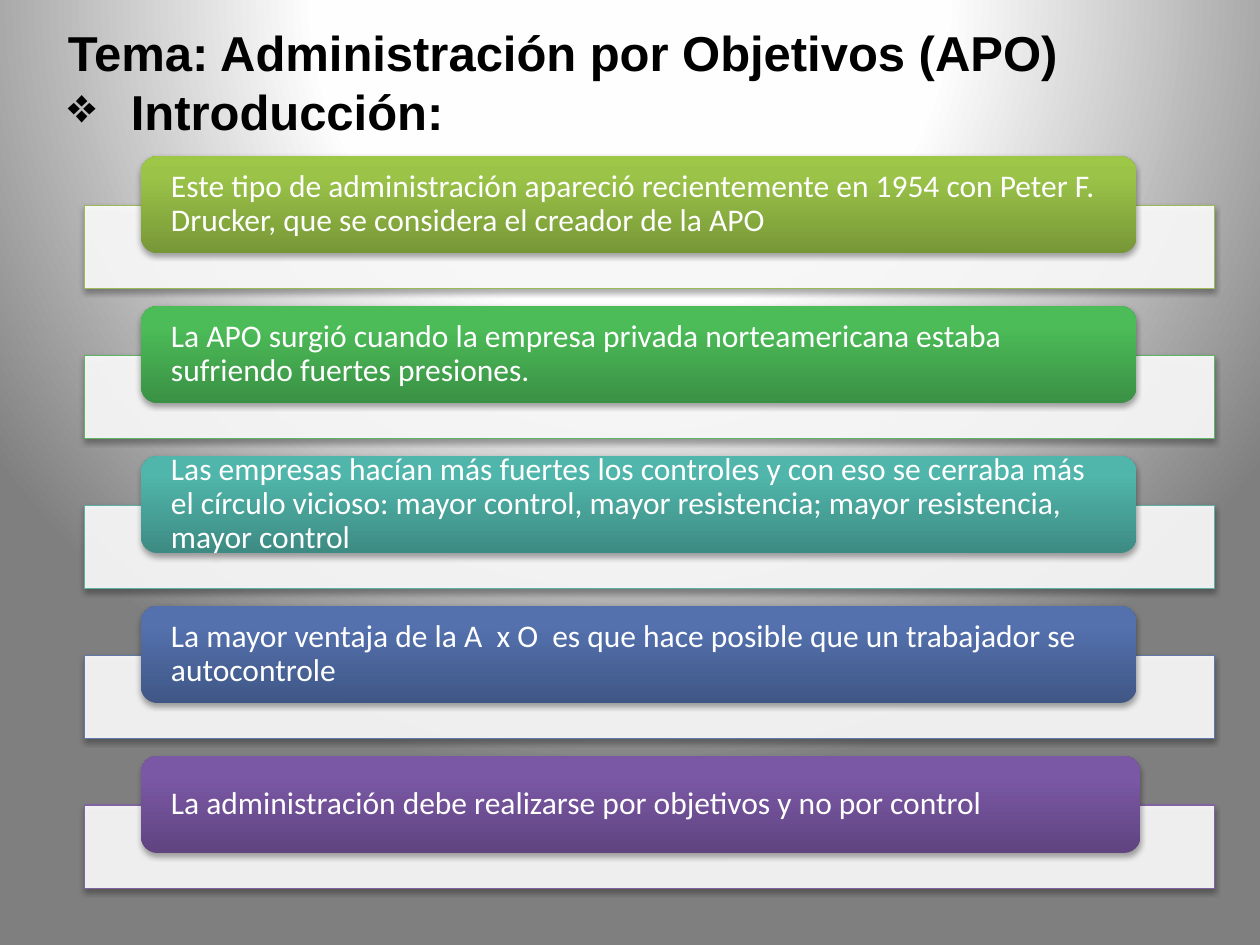
from lxml.etree import SubElement
from pptx import Presentation
from pptx.dml.color import RGBColor
from pptx.enum.shapes import MSO_SHAPE as Shape
from pptx.enum.text import MSO_ANCHOR as Anchor, PP_ALIGN as Align
from pptx.oxml.ns import qn
from pptx.util import Inches, Pt

TITLE = "Tema: Administración por Objetivos (APO)"
SUBTITLE = "Introducción:"
BACKDROP = [(0, "FFFFFF"), (40, "FEFEFE"), (100, "7F7F7F")]
IDEAS = [
    ("Este tipo de administración apareció recientemente en 1954 con Peter F. Drucker, "
     "que se considera el creador de la APO", "9BBB59", ("779737", "9BC348", "9DC746")),
    ("La APO surgió cuando la empresa privada norteamericana estaba sufriendo fuertes "
     "presiones.", "5CB565", ("3A9144", "4CBC58", "4ABF57")),
    ("Las empresas hacían más fuertes los controles y con eso se cerraba más el círculo "
     "vicioso: mayor control, mayor resistencia; mayor resistencia, mayor control",
     "5EAFA6", ("3D8B83", "50B5AA", "4EB8AC")),
    ("La mayor ventaja de la A  x O  es que hace posible que un trabajador se autocontrole",
     "6179A8", ("405786", "5471AE", "5271B0")),
    ("La administración debe realizarse por objetivos y no por control",
     "8064A2", ("5F4480", "7B58A6", "7C57A8")),
]
LABEL_STOPS = (0, 80, 100)
TOP, PITCH = 1.24, 1.19
BAR_LEFT, BAR_DROP, BAR_WIDTH, BAR_HEIGHT = 0.67, 0.39, 8.97, 0.66
LABEL_LEFT, LABEL_HEIGHT = 1.12, 0.77
LABEL_WIDTH, LAST_LABEL_WIDTH = 7.9, 7.93


def color(hex_code):
    return RGBColor.from_string(hex_code)


def node(parent, tag, **attributes):
    return SubElement(parent, qn(tag), {key: str(value) for key, value in attributes.items()})


def gradient(fill, parent, stops):
    fill.solid()
    solid = parent.find(qn("a:solidFill"))
    grad = node(parent, "a:gradFill", rotWithShape=1)
    parent.replace(solid, grad)
    stop_list = node(grad, "a:gsLst")
    for position, hex_code in stops:
        stop = node(stop_list, "a:gs", pos=position * 1000)
        node(stop, "a:srgbClr", val=hex_code)
    return grad


def add_shape(slide, preset, left, top, width, height):
    shape = slide.shapes.add_shape(preset, *map(Inches, (left, top, width, height)))
    shape.shadow.inherit = False
    effects = shape.element.spPr.find(qn("a:effectLst"))
    shadow = node(effects, "a:outerShdw", blurRad=Pt(3.1), dist=Pt(1.8), dir=5400000,
                  rotWithShape=0)
    node(node(shadow, "a:srgbClr", val="000000"), "a:alpha", val=35000)
    return shape


def add_run(paragraph, text, font, size, hex_code, bold=False):
    run = paragraph.add_run()
    run.text = text
    run.font.name, run.font.size, run.font.bold = font, Pt(size), bold
    run.font.color.rgb = color(hex_code)


def add_heading(slide):
    box = slide.shapes.add_textbox(*map(Inches, (0.44, 0.13, 9.21, 1.04)))
    frame = box.text_frame
    frame.word_wrap = True
    add_run(frame.paragraphs[0], TITLE, "Arial", 28, "000000", True)
    subtitle = frame.add_paragraph()
    add_run(subtitle, SUBTITLE, "Arial", 28, "000000", True)
    properties = subtitle._p.get_or_add_pPr()
    properties.set("marL", str(Inches(0.5)))
    properties.set("indent", str(-Inches(0.5)))
    node(properties, "a:buChar", char="❖")


def add_idea(slide, top, label_width, text, accent, shades):
    bar = add_shape(slide, Shape.RECTANGLE, BAR_LEFT, top + BAR_DROP, BAR_WIDTH, BAR_HEIGHT)
    bar.fill.solid()
    bar.fill.fore_color.rgb = color("FFFFFF")
    node(bar.element.spPr.find(qn("a:solidFill"))[0], "a:alpha", val=90000)
    bar.line.color.rgb = color(accent)
    bar.line.width = Pt(0.75)

    label = add_shape(slide, Shape.ROUNDED_RECTANGLE, LABEL_LEFT, top, label_width, LABEL_HEIGHT)
    grad = gradient(label.fill, label.element.spPr, zip(LABEL_STOPS, shades))
    node(grad, "a:lin", ang=270 * 60000, scaled=0)
    label.line.fill.background()
    frame = label.text_frame
    frame.word_wrap = True
    frame.vertical_anchor = Anchor.MIDDLE
    frame.margin_left = frame.margin_right = Inches(0.2)
    frame.margin_top = frame.margin_bottom = 0
    paragraph = frame.paragraphs[0]
    paragraph.alignment = Align.LEFT
    paragraph.line_spacing = 0.9
    add_run(paragraph, text, "Calibri", 18, "FFFFFF")


def main():
    deck = Presentation()
    deck.slide_width, deck.slide_height = Inches(10), Inches(7.5)
    slide = deck.slides.add_slide(deck.slide_layouts[6])
    backdrop = slide.background.fill
    backdrop.solid()
    grad = gradient(backdrop, slide.element.cSld.find(qn("p:bg"))[0], BACKDROP)
    glow = node(grad, "a:path", path="circle")
    node(glow, "a:fillToRect", l=50000, t=-80000, r=50000, b=180000)
    add_heading(slide)
    for row, idea in enumerate(IDEAS):
        width = LAST_LABEL_WIDTH if row == len(IDEAS) - 1 else LABEL_WIDTH
        add_idea(slide, TOP + row * PITCH, width, *idea)
    deck.save("out.pptx")


if __name__ == "__main__":
    main()
